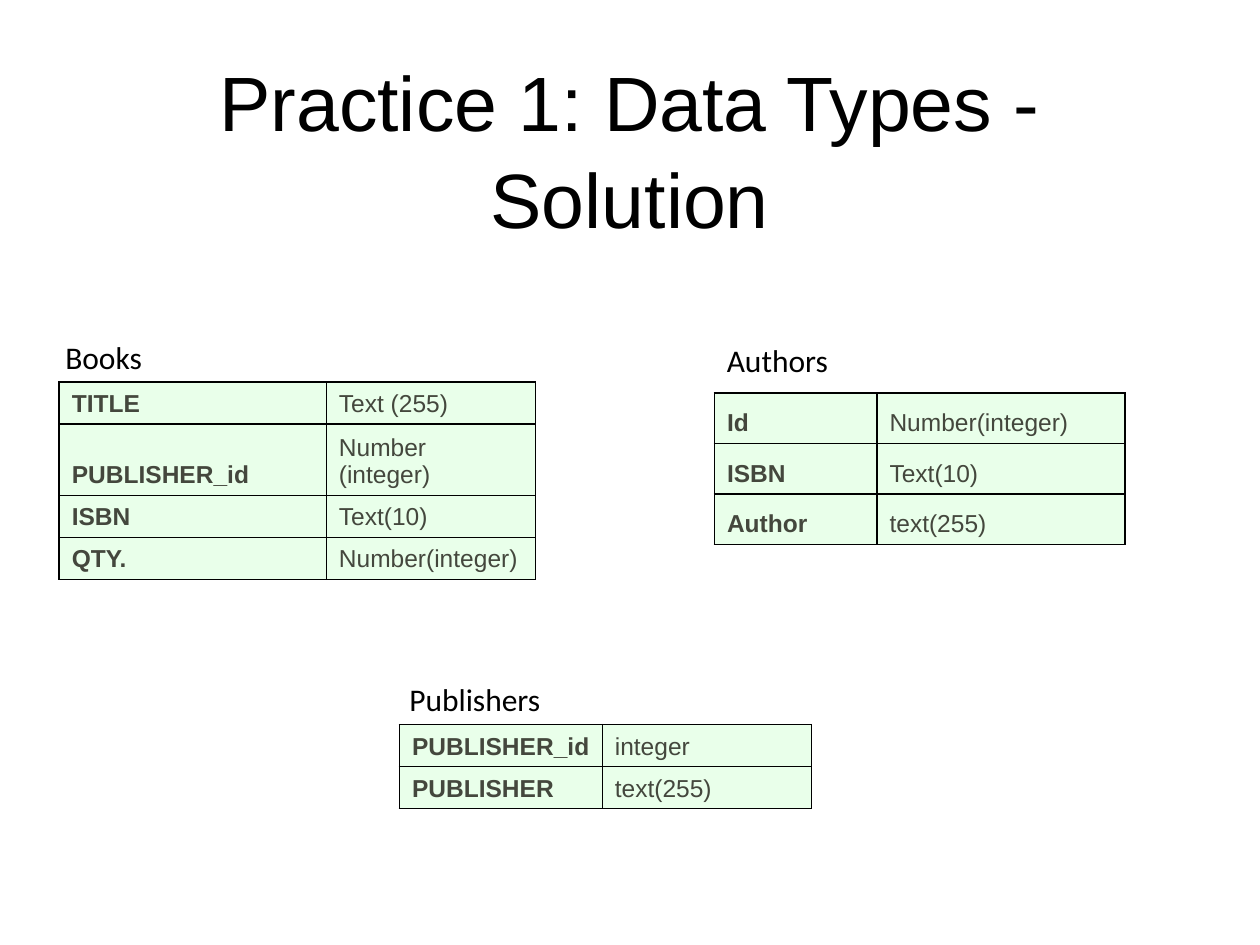
from dataclasses import dataclass

from lxml import etree
from pptx import Presentation
from pptx import util as u
from pptx.dml.color import RGBColor
from pptx.enum import text
from pptx.oxml.ns import qn
from pptx.slide import Slide
from pptx.table import _Cell
from pptx.text.text import TextFrame

BLACK = "000000"
CELL_FILL = "E9FFEA"
CELL_TEXT = "44473D"


@dataclass
class Entity:
    name: str
    label_position: tuple[float, float]
    label_width: float
    table_position: tuple[float, float]
    column_widths: tuple[float, float]
    row_height: float
    fields: list[tuple[str, str]]


ENTITIES = [
    Entity("Authors", (5.67, 2.66), 1.06, (5.67, 3.12), (1.29, 1.97), 0.4, [
        ("Id", "Number(integer)"),
        ("ISBN", "Text(10)"),
        ("Author", "text(255)"),
    ]),
    Entity("Books", (0.42, 2.63), 0.9, (0.47, 3.03), (2.12, 1.66), 0.33, [
        ("TITLE", "Text (255)"),
        ("PUBLISHER_id", "Number (integer)"),
        ("ISBN", "Text(10)"),
        ("QTY.", "Number(integer)"),
    ]),
    Entity("Publishers", (3.15, 5.35), 1.37, (3.17, 5.75), (1.61, 1.66), 0.33, [
        ("PUBLISHER_id", "integer"),
        ("PUBLISHER", "text(255)"),
    ]),
]


def color(value: str) -> RGBColor:
    return RGBColor.from_string(value)


def write(frame: TextFrame, content: str, size: float, font: str, ink: str,
          bold: bool = False) -> None:
    frame.text = content
    for run in frame.paragraphs[0].runs:
        run.font.size = u.Pt(size)
        run.font.name = font
        run.font.bold = bold
        run.font.color.rgb = color(ink)


def add_title(slide: Slide, content: str) -> None:
    shape = slide.shapes.add_textbox(u.Inches(0.5), u.Inches(0.3), u.Inches(9), u.Inches(0.87))
    frame = shape.text_frame
    frame.word_wrap = True
    frame.margin_top = u.Inches(0.1)
    write(frame, content, 44, "Arial", BLACK)
    frame.paragraphs[0].alignment = text.PP_ALIGN.CENTER
    frame.paragraphs[0].line_spacing = 1.05


def add_label(slide: Slide, entity: Entity) -> None:
    left, top = entity.label_position
    shape = slide.shapes.add_textbox(
        u.Inches(left), u.Inches(top), u.Inches(entity.label_width), u.Inches(0.4))
    frame = shape.text_frame
    frame.word_wrap = False
    frame.auto_size = text.MSO_AUTO_SIZE.SHAPE_TO_FIT_TEXT
    write(frame, entity.name, 18, "Calibri", BLACK)


def set_borders(cell: _Cell) -> None:
    properties = cell._tc.get_or_add_tcPr()
    for side in ("a:lnL", "a:lnR", "a:lnT", "a:lnB"):
        line = etree.SubElement(properties, qn(side), w=str(u.Pt(1)))
        fill = etree.SubElement(line, qn("a:solidFill"))
        etree.SubElement(fill, qn("a:srgbClr"), val=BLACK)


def fill_cell(cell: _Cell, content: str, bold: bool) -> None:
    set_borders(cell)
    cell.fill.solid()
    cell.fill.fore_color.rgb = color(CELL_FILL)
    cell.vertical_anchor = text.MSO_ANCHOR.BOTTOM
    write(cell.text_frame, content, 14, "Arial", CELL_TEXT, bold)


def add_entity_table(slide: Slide, entity: Entity) -> None:
    left, top = entity.table_position
    row_count = len(entity.fields)
    table = slide.shapes.add_table(
        row_count, 2, u.Inches(left), u.Inches(top),
        u.Inches(sum(entity.column_widths)), u.Inches(entity.row_height * row_count)).table
    table.first_row = False
    table.horz_banding = False
    for column, width in zip(table.columns, entity.column_widths):
        column.width = u.Inches(width)
    for row, field in zip(table.rows, entity.fields):
        row.height = u.Inches(entity.row_height)
        for index, content in enumerate(field):
            fill_cell(row.cells[index], content, bold=index == 0)


def main() -> None:
    presentation = Presentation()
    presentation.slide_width = u.Inches(10)
    presentation.slide_height = u.Inches(7.5)
    slide = presentation.slides.add_slide(presentation.slide_layouts[6])
    add_title(slide, "Practice 1: Data Types - Solution")
    for entity in ENTITIES:
        add_entity_table(slide, entity)
        add_label(slide, entity)
    presentation.save("out.pptx")


if __name__ == "__main__":
    main()
